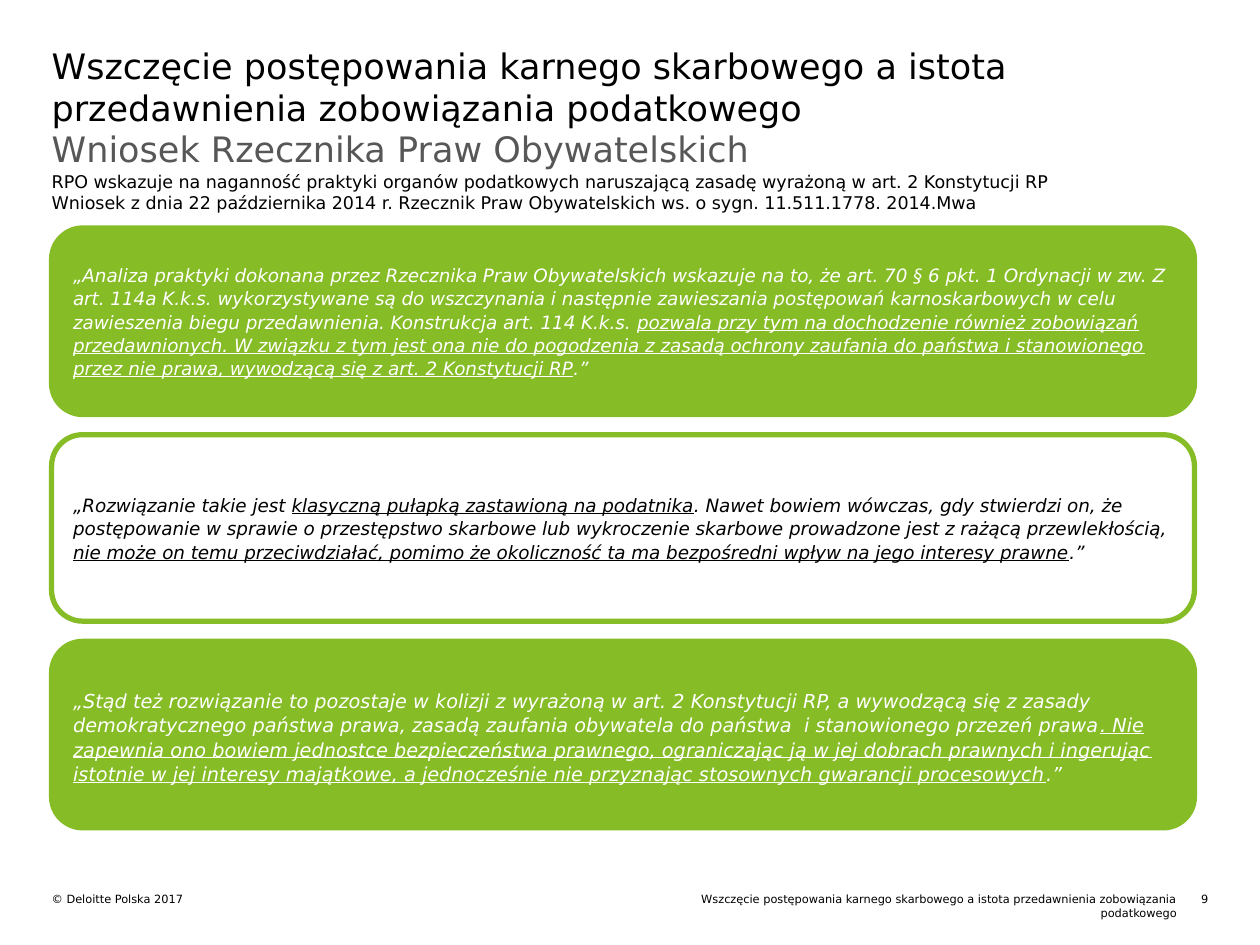
import pptx
import pptx.util
from dataclasses import dataclass
from pptx.dml.color import RGBColor
from pptx.enum.shapes import MSO_SHAPE
from pptx.enum.text import MSO_ANCHOR, MSO_AUTO_SIZE, PP_ALIGN
from pptx.util import Inches


@dataclass(frozen=True)
class Theme:
    font: str = "DejaVu Sans"
    black: str = "000000"
    white: str = "FFFFFF"
    grey: str = "575757"
    green: str = "86BC25"
    heading: float = 20
    intro: float = 10
    quote: float = 10.5
    last_quote: float = 11
    footer: float = 6.5
    border: float = 3


THEME = Theme()
LEFT = 0.41
CONTENT_WIDTH = 9.18
CARD_TOP, CARD_WIDTH, CARD_HEIGHT, CARD_STEP = 1.81, 9.07, 1.48, 1.64

TITLE = ("Wszczęcie postępowania karnego skarbowego a istota "
         "przedawnienia zobowiązania podatkowego")
SUBTITLE = "Wniosek Rzecznika Praw Obywatelskich"
INTRO = [
    "RPO wskazuje na naganność praktyki organów podatkowych naruszającą "
    "zasadę wyrażoną w art. 2 Konstytucji RP",
    "Wniosek z dnia 22 października 2014 r. Rzecznik Praw Obywatelskich "
    "ws. o sygn. 11.511.1778. 2014.Mwa",
]

# Each quote alternates plain and underlined passages, starting with plain
PRACTICE_QUOTE = [
    "„Analiza praktyki dokonana przez Rzecznika Praw Obywatelskich wskazuje "
    "na to, że art. 70 § 6 pkt. 1 Ordynacji w zw. Z art. 114a K.k.s. "
    "wykorzystywane są do wszczynania i następnie zawieszania postępowań "
    "karnoskarbowych w celu zawieszenia biegu przedawnienia. Konstrukcja "
    "art. 114 K.k.s. ",
    "pozwala przy tym na dochodzenie również zobowiązań przedawnionych. "
    "W związku z tym jest ona nie do pogodzenia z zasadą ochrony zaufania do "
    "państwa i stanowionego przez nie prawa, wywodzącą się z art. 2 "
    "Konstytucji RP",
    ".”",
]
TRAP_QUOTE = [
    "„Rozwiązanie takie jest ",
    "klasyczną pułapką zastawioną na podatnika",
    ". Nawet bowiem wówczas, gdy stwierdzi on, że postępowanie w sprawie o "
    "przestępstwo skarbowe lub wykroczenie skarbowe prowadzone jest z rażącą "
    "przewlekłością, ",
    "nie może on temu przeciwdziałać, pomimo że okoliczność ta ma bezpośredni "
    "wpływ na jego interesy prawne",
    ".”",
]
COLLISION_QUOTE = [
    "„Stąd też rozwiązanie to pozostaje w kolizji z wyrażoną w art. 2 "
    "Konstytucji RP, a wywodzącą się z zasady demokratycznego państwa prawa, "
    "zasadą zaufania obywatela do państwa  i stanowionego przezeń prawa",
    ". Nie zapewnia ono bowiem jednostce bezpieczeństwa prawnego, "
    "ograniczając ją w jej dobrach prawnych i ingerując istotnie w jej "
    "interesy majątkowe, a jednocześnie nie przyznając stosownych gwarancji "
    "procesowych",
    ".”",
]


def prepare_frame(frame, inset, anchor):
    frame.word_wrap = True
    frame.auto_size = MSO_AUTO_SIZE.NONE
    frame.vertical_anchor = anchor
    frame.margin_left = frame.margin_right = Inches(inset)
    frame.margin_top = frame.margin_bottom = Inches(inset)


def add_run(paragraph, text, size, color, italic=False, underline=False):
    run = paragraph.add_run()
    run.text = text
    font = run.font
    font.name, font.size = THEME.font, pptx.util.Pt(size)
    font.color.rgb = RGBColor.from_string(color)
    font.bold, font.italic, font.underline = False, italic, underline


def write_lines(frame, lines, size, color, align=PP_ALIGN.LEFT):
    prepare_frame(frame, 0, MSO_ANCHOR.TOP)
    paragraph = frame.paragraphs[0]
    paragraph.alignment = align
    for number, line in enumerate(lines):
        if number:
            paragraph.add_line_break()
        add_run(paragraph, line, size, color)


def set_title(slide):
    title = slide.shapes.title
    title.left, title.top = Inches(LEFT), Inches(0.35)
    title.width, title.height = Inches(CONTENT_WIDTH), Inches(0.37)
    write_lines(title.text_frame, [TITLE], THEME.heading, THEME.black)
    title.text_frame.paragraphs[0].line_spacing = 1.0


def add_label(slide, box, lines, size, color=THEME.black, align=PP_ALIGN.LEFT):
    label = slide.shapes.add_textbox(*map(Inches, box))
    write_lines(label.text_frame, lines, size, color, align)


def add_quote_card(slide, row, passages, fill, color, size):
    card = slide.shapes.add_shape(
        MSO_SHAPE.ROUNDED_RECTANGLE, Inches(LEFT),
        Inches(CARD_TOP + row * CARD_STEP), Inches(CARD_WIDTH),
        Inches(CARD_HEIGHT))
    card.shadow.inherit = False
    card.fill.solid()
    card.fill.fore_color.rgb = RGBColor.from_string(fill)
    card.line.color.rgb = RGBColor.from_string(THEME.green)
    card.line.width = pptx.util.Pt(THEME.border)
    prepare_frame(card.text_frame, 0.1, MSO_ANCHOR.MIDDLE)
    paragraph = card.text_frame.paragraphs[0]
    paragraph.alignment = PP_ALIGN.LEFT
    paragraph.line_spacing = 1.06
    for number, passage in enumerate(passages):
        add_run(paragraph, passage, size, color, italic=True,
                underline=number % 2 == 1)
    return card


def main():
    presentation = pptx.Presentation()
    presentation.slide_width, presentation.slide_height = Inches(10), Inches(7.5)
    slide = presentation.slides.add_slide(presentation.slide_layouts[5])

    # Heading and introduction
    add_label(slide, (LEFT, 1.01, CONTENT_WIDTH, 0.35), [SUBTITLE],
              THEME.heading, THEME.grey)
    set_title(slide)
    add_label(slide, (LEFT, 1.36, 8.89, 0.35), INTRO, THEME.intro)

    # Quotes
    add_quote_card(slide, 0, PRACTICE_QUOTE, THEME.green, THEME.white, THEME.quote)
    add_quote_card(slide, 1, TRAP_QUOTE, THEME.white, THEME.black, THEME.quote)
    collision = add_quote_card(slide, 2, COLLISION_QUOTE, THEME.green,
                               THEME.white, THEME.last_quote)
    collision.text_frame.margin_top = Inches(0.13)

    # Footer
    add_label(slide, (LEFT, 7.08, 4.39, 0.11), ["© Deloitte Polska 2017"],
              THEME.footer)
    add_label(slide, (5.32, 7.08, 4.02, 0.22), [TITLE], THEME.footer,
              align=PP_ALIGN.RIGHT)
    add_label(slide, (9.34, 7.08, 0.25, 0.11), ["9"], THEME.footer,
              align=PP_ALIGN.RIGHT)

    presentation.save("out.pptx")


if __name__ == "__main__":
    main()
